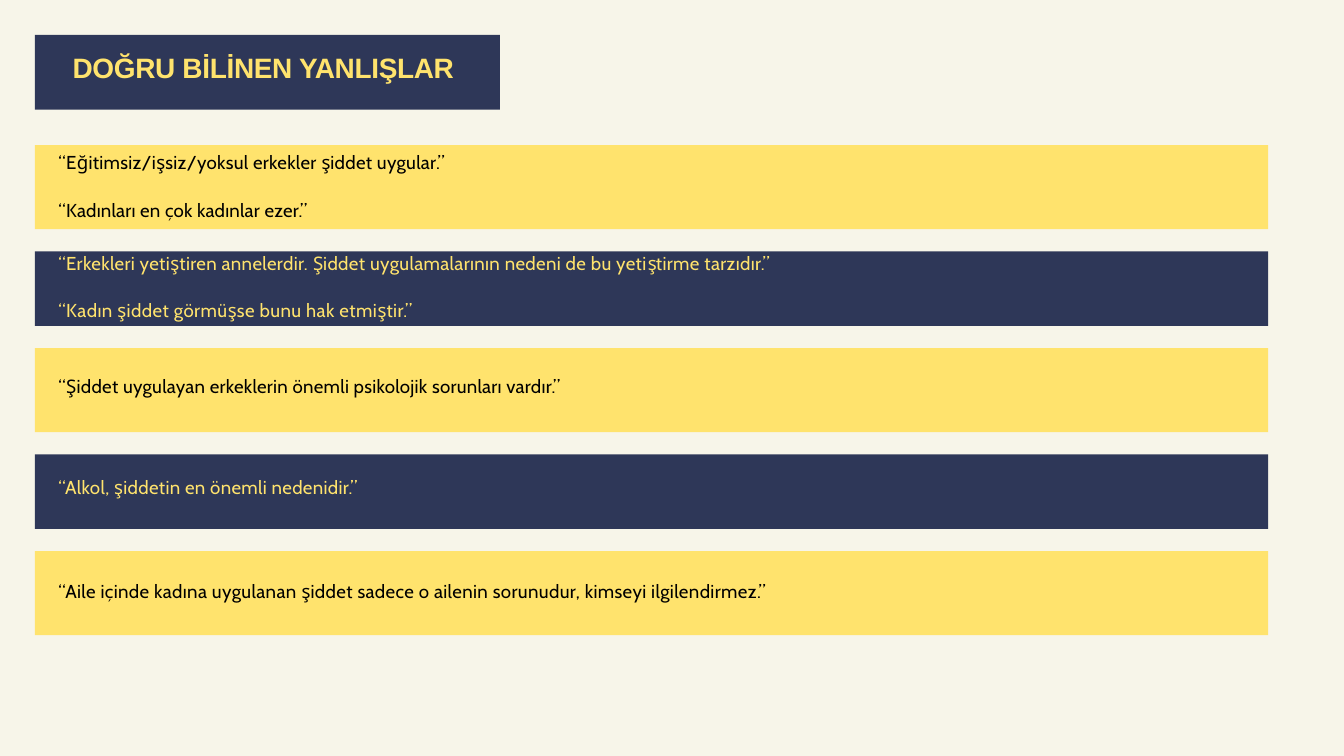
from pptx import Presentation
from pptx.dml.color import RGBColor as Rgb
from pptx.enum.shapes import MSO_SHAPE as Kind
from pptx.enum.text import MSO_ANCHOR as Anchor, MSO_AUTO_SIZE as Fit, PP_ALIGN as Align
from pptx.util import Inches, Pt

CREAM = Rgb(0xF7, 0xF5, 0xE9)
NAVY = Rgb(0x2E, 0x37, 0x58)
YELLOW = Rgb(0xFF, 0xE3, 0x6D)
BLACK = Rgb(0, 0, 0)

LEFT, WIDTH, GAP = 0.52, 18.35, 0.33
LIGHT = (1.25, YELLOW, BLACK)
DARK = (1.11, NAVY, YELLOW)

MYTHS = [
    (LIGHT, 0.09, [("“Eğitimsiz/işsiz/yoksul erkekler şiddet uygular.”", 31),
                   ("“Kadınları en çok kadınlar ezer.”", 23)]),
    (DARK, 0, [("“Erkekleri yetiştiren annelerdir. Şiddet uygulamalarının nedeni "
                "de bu yetiştirme tarzıdır.”", 38),
               ("“Kadın şiddet görmüşse bunu hak etmiştir.”", 43)]),
    (LIGHT, 0.4, [("“Şiddet uygulayan erkeklerin önemli psikolojik sorunları vardır.”", 28)]),
    (DARK, 0.32, [("“Alkol, şiddetin en önemli nedenidir.”", 34)]),
    (LIGHT, 0.43, [("“Aile içinde kadına uygulanan şiddet sadece o ailenin sorunudur, "
                    "kimseyi ilgilendirmez.”", 41)]),
]


class Deck:
    """Holds the text styles and the current slide, and draws its elements."""

    head = {"name": "Arial", "size": Pt(30), "bold": True}
    body = {"name": "Cabin", "size": Pt(20), "bold": False}

    def __init__(self, show):
        self.slide = show.slides.add_slide(show.slide_layouts[5])
        back = self.slide.background.fill
        back.solid()
        back.fore_color.rgb = CREAM

    def paint(self, shape, color):
        shape.fill.solid()
        shape.fill.fore_color.rgb = color
        shape.line.fill.background()

    def letter(self, shape, lines, style, color, left, top):
        frame = shape.text_frame
        form = {"word_wrap": True, "auto_size": Fit.NONE, "vertical_anchor": Anchor.TOP,
                "margin_left": Inches(left), "margin_top": Inches(top),
                "margin_right": 0, "margin_bottom": 0}
        for key, value in form.items():
            setattr(frame, key, value)
        for row, (text, track) in enumerate(lines):
            para = frame.add_paragraph() if row else frame.paragraphs[0]
            para.alignment = Align.LEFT
            para.space_before = Pt(27 if row else 0)
            run = para.add_run()
            run.text = text
            for key, value in style.items():
                setattr(run.font, key, value)
            run.font.color.rgb = color
            run.font._element.set("spc", str(track))

    def title(self, text, track):
        shape = self.slide.shapes.title
        spot = {"left": LEFT, "top": 0.52, "width": 6.92, "height": 1.11}
        for key, value in spot.items():
            setattr(shape, key, Inches(value))
        self.paint(shape, NAVY)
        self.letter(shape, [(text, track)], self.head, YELLOW, 0.56, 0.23)

    def band(self, top, look, inset, lines):
        high, fill, ink = look
        shape = self.slide.shapes.add_shape(
            Kind.RECTANGLE, Inches(LEFT), Inches(top), Inches(WIDTH), Inches(high))
        shape.shadow.inherit = False
        self.paint(shape, fill)
        self.letter(shape, lines, self.body, ink, 0.35, inset)
        return top + high + GAP


def main():
    show = Presentation()
    show.slide_width, show.slide_height = Inches(20), Inches(11.25)
    deck = Deck(show)
    deck.title("DOĞRU BİLİNEN YANLIŞLAR", -37)
    top = 2.16
    for look, inset, lines in MYTHS:
        top = deck.band(top, look, inset, lines)
    show.save("out.pptx")


if __name__ == "__main__":
    main()
